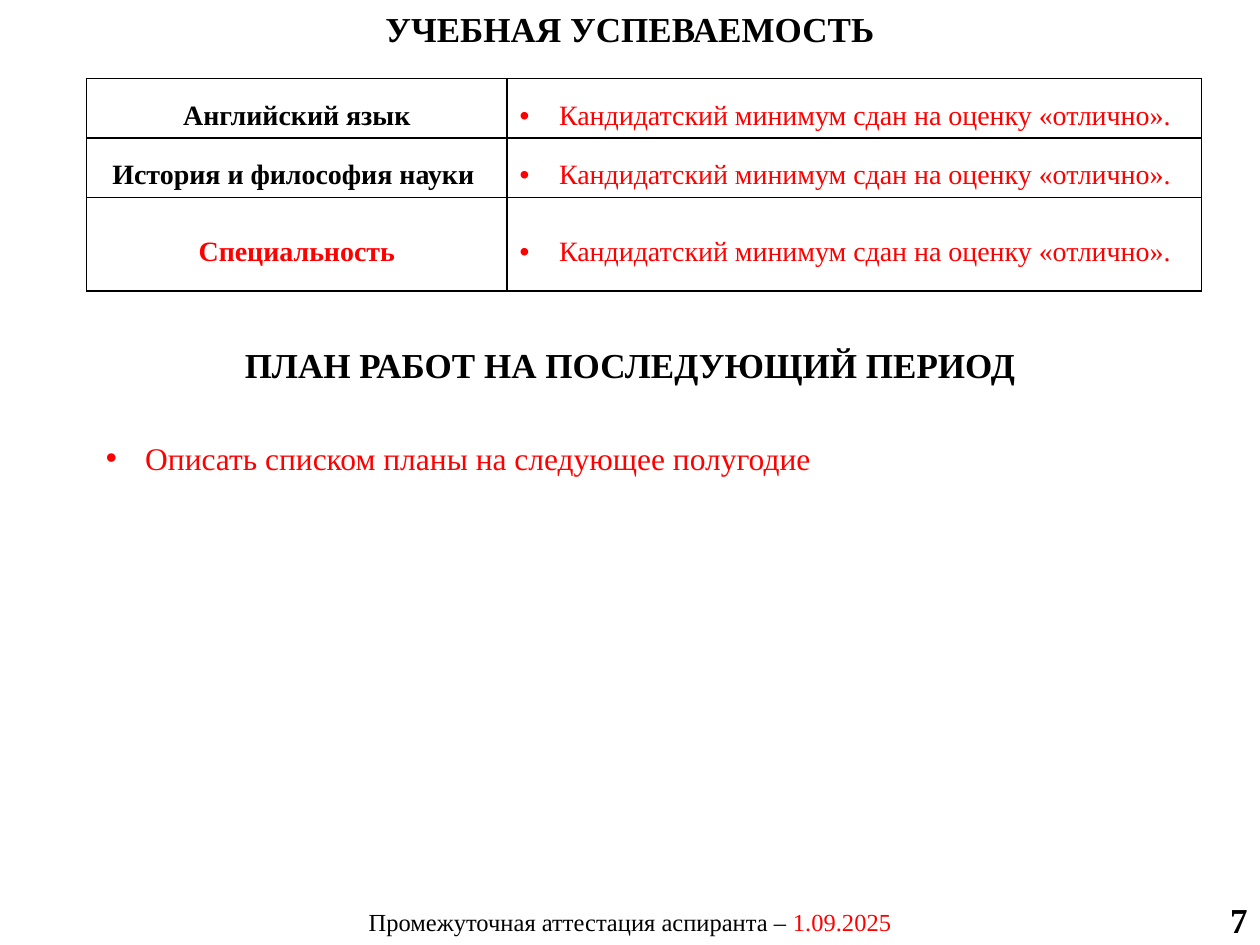
import pptx
import pptx.util
import pptx.dml.color
import pptx.enum.text
from lxml import etree

Pt = pptx.util.Pt
ALIGN = pptx.enum.text.PP_ALIGN
MIDDLE = pptx.enum.text.MSO_ANCHOR.MIDDLE
TOP = pptx.enum.text.MSO_ANCHOR.TOP
BLACK, RED, WHITE = "000000", "FF0000", "FFFFFF"


def colour(value):
    return pptx.dml.color.RGBColor.from_string(value)


def write(frame, text, size=20, color=BLACK, bold=False, align=ALIGN.LEFT,
          anchor=TOP, spacing=1.0, bullet=False):
    """Add a formatted span to the first paragraph of a text frame or cell."""
    frame.vertical_anchor = anchor
    frame.word_wrap = True
    para = getattr(frame, "text_frame", frame).paragraphs[0]
    para.alignment = align
    para.line_spacing = spacing
    para.space_before = Pt(0)
    span = para.add_run()
    span.text = text
    span.font.name = "Times New Roman"
    span.font.size = Pt(size)
    span.font.bold = bold
    span.font.color.rgb = colour(color)
    if bullet:
        props = para._p.get_or_add_pPr()
        props.set("marL", str(Pt(22.5)))
        props.set("indent", str(-Pt(22.5)))
        etree.SubElement(props, pptx.oxml.ns.qn("a:buFont"), typeface="Arial")
        etree.SubElement(props, pptx.oxml.ns.qn("a:buChar"), char="•")


deck = pptx.Presentation()
deck.slide_width, deck.slide_height = Pt(720), Pt(540)
page = deck.slides.add_slide(deck.slide_layouts[1])

# Title and list of plans
title, plans = page.placeholders
title.left, title.top, title.width, title.height = Pt(0), Pt(0.7), Pt(720), Pt(31.5)
write(title.text_frame, "УЧЕБНАЯ УСПЕВАЕМОСТЬ", bold=True, align=ALIGN.CENTER)
plans.left, plans.top, plans.width, plans.height = Pt(53.3), Pt(247), Pt(630), Pt(29)
write(plans.text_frame, "Описать списком планы на следующее полугодие",
      size=18, color=RED, bullet=True)

# Table of exams
subjects = [("Английский язык", BLACK, 34),
            ("История и философия науки ", BLACK, 34),
            ("Специальность", RED, 53.5)]
table = page.shapes.add_table(3, 2, Pt(49.5), Pt(44.8), Pt(637), Pt(121.5)).table
table.first_row = table.horz_banding = False
table.columns[0].width, table.columns[1].width = Pt(240.3), Pt(396.7)
for row, (subject, color, height) in zip(table.rows, subjects):
    row.height = Pt(height)
    name, result = row.cells
    write(name, subject, size=16, color=color, bold=True, align=ALIGN.CENTER,
          anchor=MIDDLE, spacing=1.5)
    write(result, "Кандидатский минимум сдан на оценку «отлично».", size=16,
          color=RED, anchor=MIDDLE, spacing=1.5, bullet=True)

# Cell fills and borders
for cell in table.iter_cells():
    props = cell._tc.get_or_add_tcPr()
    for side in ("lnL", "lnR", "lnT", "lnB"):
        line = etree.SubElement(props, pptx.oxml.ns.qn("a:" + side), w=str(Pt(1)))
        solid = etree.SubElement(line, pptx.oxml.ns.qn("a:solidFill"))
        etree.SubElement(solid, pptx.oxml.ns.qn("a:srgbClr"), val=BLACK)
    cell.fill.solid()
    cell.fill.fore_color.rgb = colour(WHITE)
    tint = props.find(".//" + pptx.oxml.ns.qn("a:solidFill") + "[last()]/"
                      + pptx.oxml.ns.qn("a:srgbClr") + "[@val='" + WHITE + "']")
    etree.SubElement(tint, pptx.oxml.ns.qn("a:alpha"), val="20000")

# Second heading, footer and page number
heading = page.shapes.add_textbox(Pt(0), Pt(193), Pt(720), Pt(31.5))
write(heading.text_frame, "ПЛАН РАБОТ НА ПОСЛЕДУЮЩИЙ ПЕРИОД", bold=True,
      align=ALIGN.CENTER)
footer = page.shapes.add_textbox(Pt(0), Pt(515), Pt(720), Pt(24.2))
for text, color in (("Промежуточная аттестация аспиранта – ", BLACK),
                    ("1.09.2025", RED)):
    write(footer.text_frame, text, size=14, color=color, align=ALIGN.CENTER)
number = page.shapes.add_textbox(Pt(558), Pt(510.8), Pt(162), Pt(28.8))
write(number.text_frame, "7", bold=True, align=ALIGN.RIGHT, anchor=MIDDLE)

deck.save("out.pptx")
